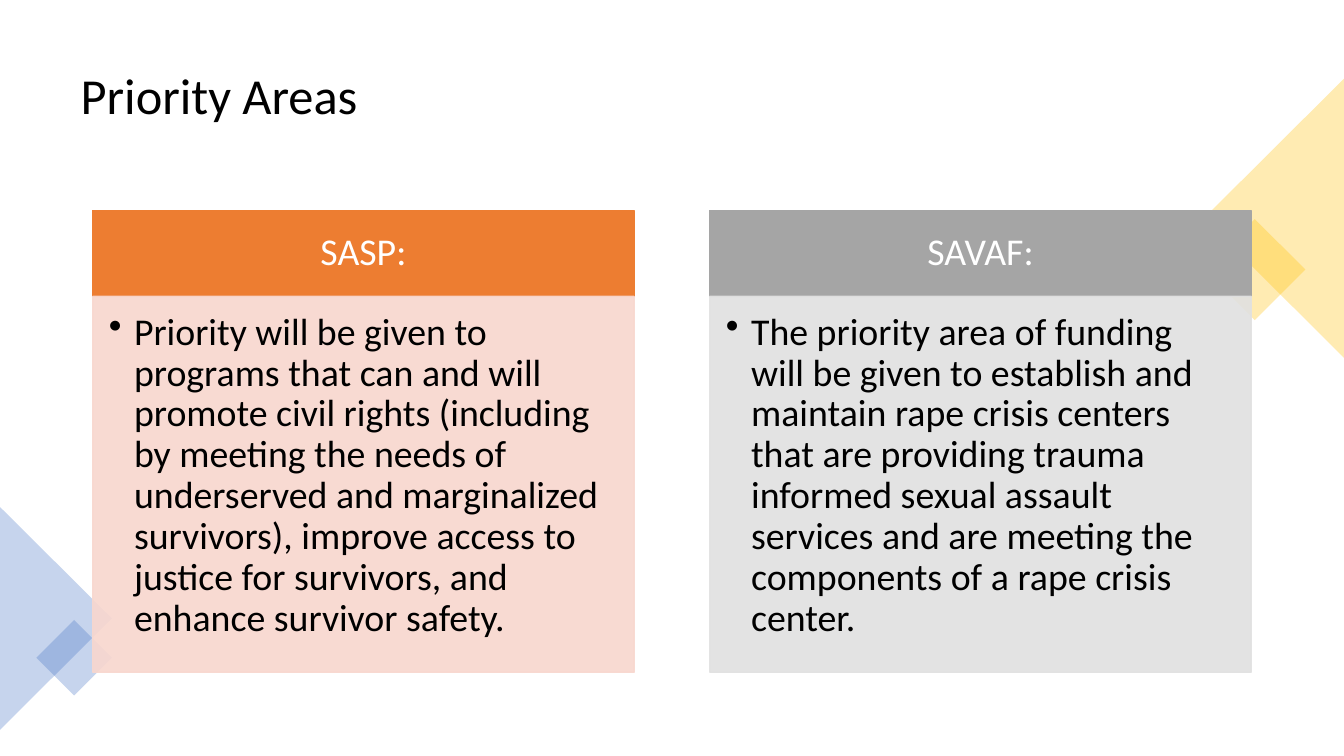
import pptx
import pptx.dml.color
import pptx.enum.shapes
import pptx.enum.text
import pptx.oxml.ns
import pptx.util
from dataclasses import dataclass
from lxml import etree

Inches = pptx.util.Inches
SHAPE = pptx.enum.shapes.MSO_SHAPE
ALIGN = pptx.enum.text.PP_ALIGN
ANCHOR = pptx.enum.text.MSO_ANCHOR


@dataclass(frozen=True)
class Theme:
    font: str = "Calibri"
    title_size: int = 36
    card_size: int = 27
    black: str = "000000"
    white: str = "FFFFFF"
    gold: str = "FFC000"
    blue: str = "4472C4"
    orange: str = "ED7D31"
    peach: str = "F8D7CE"
    grey: str = "A5A5A5"
    pale_grey: str = "E1E1E1"


theme = Theme()


def add_block(kind, box, color, opacity=100, rotation=0, outlined=False):
    block = slide.shapes.add_shape(kind, *[Inches(length) for length in box])
    block.shadow.inherit = False
    block.rotation = rotation
    paints = [block.fill]
    if outlined:
        block.line.width = pptx.util.Pt(1)
        paints.append(block.line.fill)
    else:
        block.line.fill.background()
    for paint in paints:
        paint.solid()
        paint.fore_color.rgb = pptx.dml.color.RGBColor.from_string(color)
    if opacity < 100:
        for tint in block.element.spPr.iter(pptx.oxml.ns.qn("a:srgbClr")):
            etree.SubElement(tint, pptx.oxml.ns.qn("a:alpha"), val=str(opacity * 1000))
    return block


def write(frame, text, size, color, align, anchor, insets=None, bullet=False):
    frame.word_wrap = True
    frame.vertical_anchor = anchor
    if insets:
        frame.margin_left, frame.margin_top, frame.margin_right, frame.margin_bottom = map(Inches, insets)
    frame.text = text
    paragraph = frame.paragraphs[0]
    paragraph.alignment = align
    paragraph.line_spacing = 0.9
    if bullet:
        properties = paragraph._p.get_or_add_pPr()
        properties.set("marL", str(Inches(0.25)))
        properties.set("indent", str(Inches(-0.25)))
        etree.SubElement(properties, pptx.oxml.ns.qn("a:buChar"), char="•")
    paragraph.font.name = theme.font
    paragraph.font.size = pptx.util.Pt(size)
    paragraph.font.color.rgb = pptx.dml.color.RGBColor.from_string(color)


presentation = pptx.Presentation()
presentation.slide_width = Inches(13.33)
presentation.slide_height = Inches(7.5)
slide = presentation.slides.add_slide(presentation.slide_layouts[5])

title = slide.shapes.title
title.left, title.top, title.width, title.height = map(Inches, (0.7, 0.35, 11.93, 1.24))
write(title.text_frame, "Priority Areas", theme.title_size, theme.black, ALIGN.LEFT, ANCHOR.MIDDLE)

corner_decorations = [
    (SHAPE.RECTANGLE, (12.09, 2.32, 0.71, 0.71), theme.gold, 45),
    (SHAPE.ISOSCELES_TRIANGLE, (11.25, 1.47, 2.77, 1.39), theme.gold, 270),
    (SHAPE.ISOSCELES_TRIANGLE, (-0.55, 5.58, 2.21, 1.11), theme.blue, 90),
    (SHAPE.RECTANGLE, (0.47, 6.26, 0.53, 0.53), theme.blue, 45),
]
for kind, box, color, rotation in corner_decorations:
    add_block(kind, box, color, opacity=30, rotation=rotation)

programs = [
    ("SASP:", theme.orange, theme.peach,
     "Priority will be given to programs that can and will promote civil rights "
     "(including by meeting the needs of underserved and marginalized survivors), "
     "improve access to justice for survivors, and enhance survivor safety."),
    ("SAVAF:", theme.grey, theme.pale_grey,
     "The priority area of funding will be given to establish and maintain rape crisis "
     "centers that are providing trauma informed sexual assault services and are meeting "
     "the components of a rape crisis center."),
]
card_left, card_top, card_width, card_pitch = 0.92, 2.09, 5.37, 6.12
heading_height, body_height = 0.85, 3.73
for index, (name, heading_color, body_color, priority) in enumerate(programs):
    left = card_left + index * card_pitch
    heading = add_block(SHAPE.RECTANGLE, (left, card_top, card_width, heading_height),
                        heading_color, outlined=True)
    write(heading.text_frame, name, theme.card_size, theme.white, ALIGN.CENTER,
          ANCHOR.MIDDLE, (0.21, 0.12, 0.21, 0.12))
    body = add_block(SHAPE.RECTANGLE, (left, card_top + heading_height, card_width, body_height),
                     body_color, opacity=90, outlined=True)
    write(body.text_frame, priority, theme.card_size, theme.black, ALIGN.LEFT,
          ANCHOR.TOP, (0.16, 0.16, 0.21, 0.24), bullet=True)

presentation.save("out.pptx")
